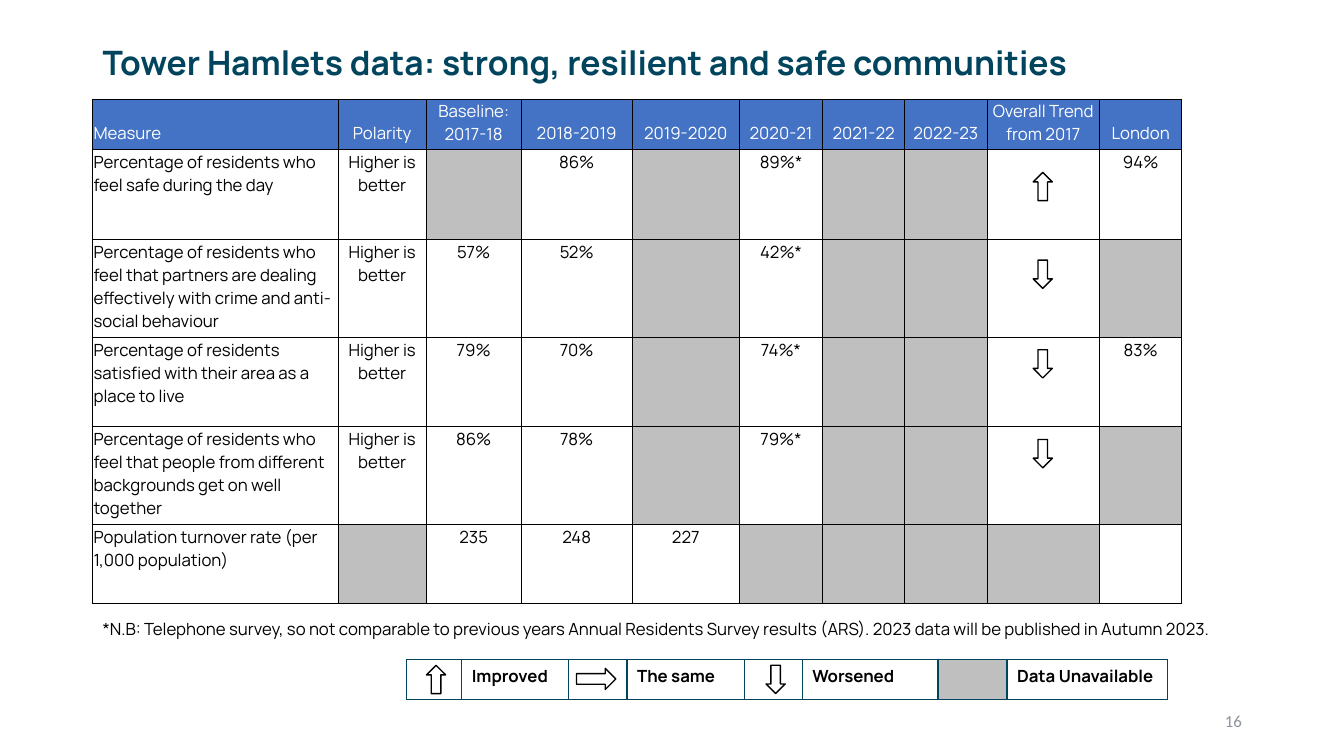
from dataclasses import dataclass

from lxml import etree
from pptx import Presentation
from pptx import util as u
from pptx.dml import color
from pptx.enum import shapes, text
from pptx.oxml import ns

Pt = u.Pt
MID = text.PP_ALIGN.CENTER
RIGHT = text.PP_ALIGN.RIGHT
SHAPE = shapes.MSO_SHAPE
UP, SAME, DOWN = SHAPE.UP_ARROW, SHAPE.RIGHT_ARROW, SHAPE.DOWN_ARROW


@dataclass(frozen=True)
class Theme:
    teal: str = "00445E"
    blue: str = "4472C4"
    gray: str = "BFBFBF"
    mute: str = "8C949D"
    black: str = "000000"
    white: str = "FFFFFF"
    font: str = "Manrope"
    plain: str = "Calibri"
    head: int = 24
    body: int = 12


def rgb(code):
    return color.RGBColor.from_string(code)


def write(frame, words, size, tint, font, bold=False, align=None, gap=None):
    """Fill a text frame, one paragraph per line of words."""
    for i, line in enumerate(words.split("\n")):
        para = frame.paragraphs[0] if i == 0 else frame.add_paragraph()
        para.alignment = align
        para.line_spacing = gap
        run = para.add_run()
        run.text = line
        run.font.size = Pt(size)
        run.font.name = font
        run.font.bold = bold
        run.font.color.rgb = rgb(tint)


def edge(cell, tint, width):
    """Draw all four borders of a cell; call before the fill is set."""
    props = cell._tc.get_or_add_tcPr()
    for side in ("a:lnL", "a:lnR", "a:lnT", "a:lnB"):
        line = etree.SubElement(props, ns.qn(side), w=str(Pt(width)))
        fill = etree.SubElement(line, ns.qn("a:solidFill"))
        etree.SubElement(fill, ns.qn("a:srgbClr"), val=tint)


class Deck:
    """Holds the theme and the slide being drawn."""

    def __init__(self, theme):
        self.theme = theme
        self.file = Presentation()
        self.file.slide_width = Pt(960)
        self.file.slide_height = Pt(540)
        self.slide = self.file.slides.add_slide(self.file.slide_layouts[6])

    def label(self, box, words, middle=False, **style):
        frame = self.slide.shapes.add_textbox(*map(Pt, box)).text_frame
        frame.word_wrap = True
        if middle:
            frame.vertical_anchor = text.MSO_ANCHOR.MIDDLE
        write(frame, words, **style)

    def arrow(self, kind, x, y, width=13.7, height=20.2):
        shape = self.slide.shapes.add_shape(kind, Pt(x), Pt(y), Pt(width), Pt(height))
        shape.shadow.inherit = False
        shape.fill.background()
        shape.line.color.rgb = rgb(self.theme.black)
        shape.line.width = Pt(1)

    def grid(self, x, y, cols, rows, cells, tint, width, paint):
        """Add a table; paint(cell, row, col, words) styles each cell, None means no data."""
        size = Pt(sum(cols)), Pt(sum(rows))
        table = self.slide.shapes.add_table(len(rows), len(cols), Pt(x), Pt(y), *size).table
        table.first_row = table.horz_banding = False
        for col, wide in zip(table.columns, cols):
            col.width = Pt(wide)
        for r, (row, tall) in enumerate(zip(table.rows, rows)):
            row.height = Pt(tall)
            for c, words in enumerate(cells[r]):
                cell = table.cell(r, c)
                edge(cell, tint, width)
                if words is None:
                    cell.fill.solid()
                    cell.fill.fore_color.rgb = rgb(self.theme.gray)
                else:
                    cell.fill.background()
                if not words:
                    cell.margin_top = cell.margin_bottom = 0
                paint(cell, r, c, words)

    def data(self, cell, r, c, words):
        """Style one cell of the measures table."""
        if not words:
            return
        look = self.theme
        cell.margin_left = cell.margin_right = cell.margin_top = Pt(0.7)
        cell.margin_bottom = Pt(3.6)
        if r == 0:
            cell.vertical_anchor = text.MSO_ANCHOR.BOTTOM
            cell.fill.solid()
            cell.fill.fore_color.rgb = rgb(look.blue)
        write(cell.text_frame, words, look.body, look.black if r else look.white,
              look.font, align=MID if c else None)

    def key(self, cell, r, c, words):
        """Style one cell of the legend."""
        if words:
            look = self.theme
            write(cell.text_frame, words, look.body, look.black, look.font, bold=True)


BETTER = "Higher is better"
TABLE = [
    ["Measure", "Polarity", "Baseline:\n2017-18", "2018-2019", "2019-2020",
     "2020-21", "2021-22", "2022-23", "Overall Trend from 2017", "London"],
    ["Percentage of residents who feel safe during the day",
     BETTER, None, "86%", None, "89%*", None, None, "", "94%"],
    ["Percentage of residents who feel that partners are dealing effectively "
     "with crime and anti-social behaviour",
     BETTER, "57%", "52%", None, "42%*", None, None, "", None],
    ["Percentage of residents satisfied with their area as a place to live",
     BETTER, "79%", "70%", None, "74%*", None, None, "", "83%"],
    ["Percentage of residents who feel that people from different backgrounds "
     "get on well together",
     BETTER, "86%", "78%", None, "79%*", None, None, "", None],
    ["Population turnover rate (per 1,000 population)",
     None, "235", "248", "227", None, None, None, None, ""],
]
COLS = [175.7, 62.3, 68.4, 78.8, 77, 59.2, 58.8, 58.6, 80.6, 58.6]
ROWS = [36.4, 64.1, 69.7, 64.1, 69.7, 56.2]
TRENDS = [(UP, 123.1), (DOWN, 185.8), (DOWN, 249.8), (DOWN, 313.9)]
NOTE = ("*N.B: Telephone survey, so not comparable to previous years Annual Residents "
        "Survey results (ARS). 2023 data will be published in Autumn 2023.")


def main():
    look = Theme()
    deck = Deck(look)
    deck.label((66.2, 18, 828, 56.9), "Tower Hamlets data: strong, resilient and safe communities",
               middle=True, size=look.head, tint=look.teal, font=look.font, bold=True, gap=0.9)

    deck.grid(66.2, 70.6, COLS, ROWS, TABLE, look.black, 0.5, deck.data)
    for kind, y in TRENDS:
        deck.arrow(kind, 738, y)
    deck.label((66.2, 438.5, 813.6, 21.6), NOTE, size=look.body, tint=look.black, font=look.font)

    deck.grid(290.2, 470.9, [39.6, 76.3, 41.8, 84.2, 41, 96.5], [28.8],
              [["", "Improved", "", "The same", "", "Worsened"]], look.teal, 1, deck.key)
    deck.grid(670.3, 470.9, [49, 114.5], [28.8],
              [[None, "Data Unavailable"]], look.teal, 1, deck.key)
    deck.arrow(UP, 304.6, 475.2)
    deck.arrow(SAME, 411.8, 477.4, 28.1, 15.1)
    deck.arrow(DOWN, 547.2, 475.2)

    deck.label((678.2, 500.4, 216, 28.8), "16", middle=True,
               size=look.body, tint=look.mute, font=look.plain, align=RIGHT)
    deck.file.save("out.pptx")


if __name__ == "__main__":
    main()
